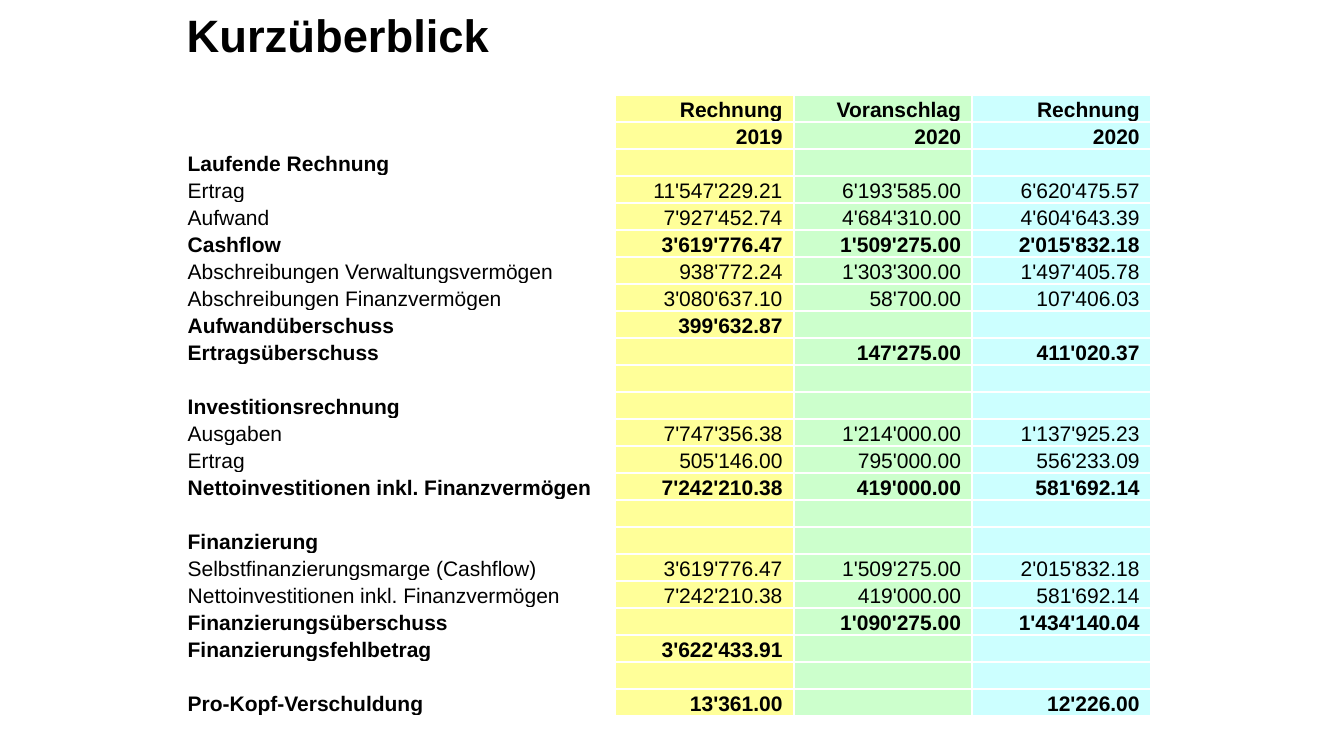
"""Builds the Kurzüberblick slide with the three-year accounts table."""
from dataclasses import dataclass

from lxml.etree import SubElement
from pptx import Presentation
from pptx.dml.color import RGBColor as RGB
from pptx.enum.text import MSO_ANCHOR as ANCHOR, MSO_AUTO_SIZE as FIT, PP_ALIGN as ALIGN
from pptx.oxml.ns import qn
from pptx.slide import Slide
from pptx.table import _Cell as Cell
from pptx.text.text import TextFrame
from pptx.util import Cm, Pt


@dataclass(frozen=True)
class Theme:
    font: str = "Arial"
    text: str = "000000"
    border: str = "FFFFFF"
    columns: tuple = (None, "FFFF99", "CCFFCC", "CCFFFF")
    title_size: float = 32.4
    table_size: float = 15
    border_width: float = 1.5


@dataclass(frozen=True)
class Row:
    label: str = ""
    rechnung_2019: str = ""
    voranschlag_2020: str = ""
    rechnung_2020: str = ""
    bold: bool = True

    def texts(self) -> tuple:
        return self.label, self.rechnung_2019, self.voranschlag_2020, self.rechnung_2020


THEME = Theme()
COLUMN_WIDTHS = (Cm(11.05), Cm(4.5), Cm(4.5), Cm(4.5))
ROW_HEIGHT = Cm(0.68)
ROWS = (
    Row("", "Rechnung", "Voranschlag", "Rechnung"),
    Row("", "2019", "2020", "2020"),
    Row("Laufende Rechnung"),
    Row("Ertrag", "11'547'229.21", "6'193'585.00", "6'620'475.57", bold=False),
    Row("Aufwand", "7'927'452.74", "4'684'310.00", "4'604'643.39", bold=False),
    Row("Cashflow", "3'619'776.47", "1'509'275.00", "2'015'832.18"),
    Row("Abschreibungen Verwaltungsvermögen", "938'772.24", "1'303'300.00", "1'497'405.78", bold=False),
    Row("Abschreibungen Finanzvermögen", "3'080'637.10", "58'700.00", "107'406.03", bold=False),
    Row("Aufwandüberschuss", "399'632.87"),
    Row("Ertragsüberschuss", "", "147'275.00", "411'020.37"),
    Row(),
    Row("Investitionsrechnung"),
    Row("Ausgaben", "7'747'356.38", "1'214'000.00", "1'137'925.23", bold=False),
    Row("Ertrag", "505'146.00", "795'000.00", "556'233.09", bold=False),
    Row("Nettoinvestitionen inkl. Finanzvermögen", "7'242'210.38", "419'000.00", "581'692.14"),
    Row(),
    Row("Finanzierung"),
    Row("Selbstfinanzierungsmarge (Cashflow)", "3'619'776.47", "1'509'275.00", "2'015'832.18", bold=False),
    Row("Nettoinvestitionen inkl. Finanzvermögen", "7'242'210.38", "419'000.00", "581'692.14", bold=False),
    Row("Finanzierungsüberschuss", "", "1'090'275.00", "1'434'140.04"),
    Row("Finanzierungsfehlbetrag", "3'622'433.91"),
    Row(),
    Row("Pro-Kopf-Verschuldung", "13'361.00", "", "12'226.00"),
)


def write(tf: TextFrame, text: str, *, size: float, bold: bool = True,
          align: ALIGN = ALIGN.LEFT, spacing: float = 1.0, after: float = 0) -> None:
    p = tf.paragraphs[0]
    p.alignment, p.line_spacing, p.space_after = align, spacing, Pt(after)
    if not text:
        SubElement(p._p, qn("a:endParaRPr"), sz=str(int(size * 100)))
        return
    r = p.add_run()
    r.text = text
    r.font.name, r.font.size, r.font.bold = THEME.font, Pt(size), bold
    r.font.color.rgb = RGB.from_string(THEME.text)


def add_borders(cell: Cell) -> None:
    tc_pr = cell._tc.get_or_add_tcPr()
    for side in ("lnL", "lnR", "lnT", "lnB"):
        ln = SubElement(tc_pr, qn(f"a:{side}"), w=str(Pt(THEME.border_width)))
        fill = SubElement(ln, qn("a:solidFill"))
        SubElement(fill, qn("a:srgbClr"), val=THEME.border)


def format_cell(cell: Cell, color: str | None) -> None:
    cell.margin_left = cell.margin_right = Cm(0.28)
    cell.margin_top = cell.margin_bottom = 0
    cell.vertical_anchor = ANCHOR.MIDDLE
    add_borders(cell)
    if color:
        cell.fill.solid()
        cell.fill.fore_color.rgb = RGB.from_string(color)
    else:
        cell.fill.background()


def add_title(s: Slide, text: str) -> None:
    sp = s.shapes.title
    sp.left, sp.top, sp.width, sp.height = Cm(4.45), Cm(0.2), Cm(28.3), Cm(1.5)
    tf = sp.text_frame
    tf.word_wrap, tf.auto_size, tf.vertical_anchor = True, FIT.NONE, ANCHOR.MIDDLE
    write(tf, text, size=THEME.title_size, spacing=0.9)


def add_accounts(s: Slide) -> None:
    table = s.shapes.add_table(len(ROWS), len(COLUMN_WIDTHS), Cm(4.45), Cm(2.4),
                               sum(COLUMN_WIDTHS), ROW_HEIGHT * len(ROWS)).table
    table.first_row = table.horz_banding = False
    for column, width in zip(table.columns, COLUMN_WIDTHS):
        column.width = width
    for i, row in enumerate(ROWS):
        table.rows[i].height = ROW_HEIGHT
        for j, (text, color) in enumerate(zip(row.texts(), THEME.columns)):
            cell = table.cell(i, j)
            format_cell(cell, color)
            write(cell.text_frame, text, size=THEME.table_size, bold=row.bold,
                  align=ALIGN.RIGHT if j else ALIGN.LEFT,
                  spacing=1.15 if text else 1.0, after=10 if text else 0)


def main() -> None:
    prs = Presentation()
    prs.slide_width, prs.slide_height = Cm(33.87), Cm(19.05)
    s = prs.slides.add_slide(prs.slide_layouts[5])
    add_title(s, "Kurzüberblick")
    add_accounts(s)
    prs.save("out.pptx")


if __name__ == "__main__":
    main()
